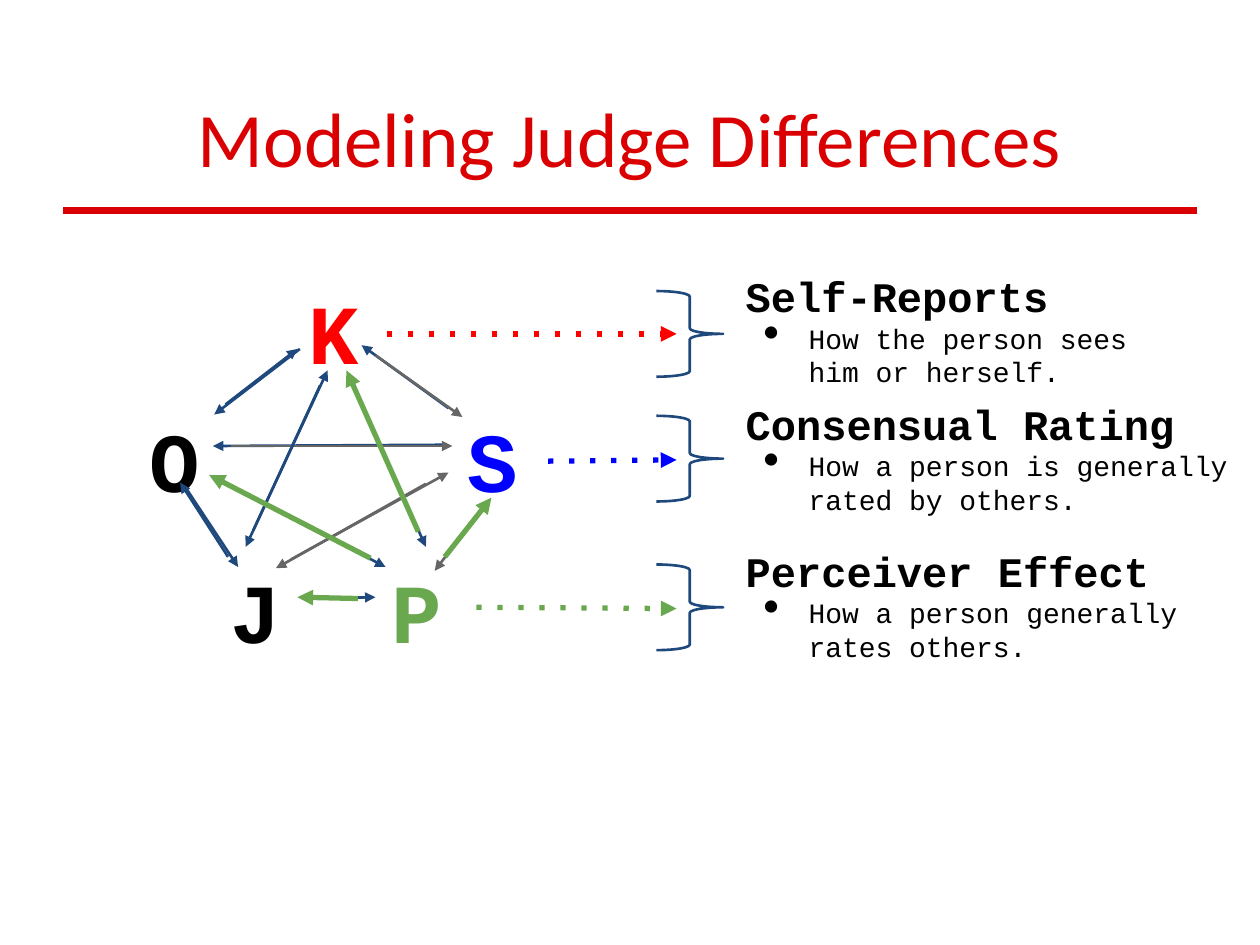
from lxml.etree import SubElement
from pptx import Presentation
from pptx.dml.color import RGBColor
from pptx.enum.shapes import MSO_CONNECTOR, MSO_SHAPE
from pptx.enum.text import MSO_ANCHOR, PP_ALIGN
from pptx.oxml.ns import qn
from pptx.util import Inches, Pt

COLORS = {
    "title": "DA0002", "navy": "1F497D", "gray": "666666", "green": "6AA84F",
    "red": "FF0000", "blue": "0000FF", "black": "000000",
}
MONO = "Courier New"
JUDGES = [
    ("K", 2.35, 2.13, "red"), ("S", 3.61, 3.14, "blue"), ("J", 1.73, 4.34, "black"),
    ("P", 3.01, 4.34, "green"), ("O", 1.09, 3.14, "black"),
]
BACK_RATINGS = [
    ((3.38, 3.84), (2.19, 4.51), "gray"),
    ((3.52, 3.53), (1.69, 3.54), "navy"),
]
RATINGS = [
    ((2.38, 2.77), (1.7, 3.29), "navy"), ((2.54, 3.06), (1.95, 4.34), "navy"),
    ((2.81, 3.08), (3.38, 4.34), "navy"), ((1.81, 4.42), (1.43, 3.83), "navy"),
    ((1.48, 3.88), (1.89, 4.5), "navy"), ((1.79, 3.83), (3.06, 4.5), "navy"),
    ((1.83, 3.54), (3.59, 3.54), "gray"), ((1.79, 3.21), (2.36, 2.77), "navy"),
    ((2.5, 4.75), (2.98, 4.74), "navy"), ((3.56, 3.24), (2.87, 2.74), "navy"),
    ((2.01, 4.21), (2.6, 2.94), "navy"), ((2.98, 2.82), (3.67, 3.31), "gray"),
    ((2.31, 4.44), (3.56, 3.75), "gray"), ((3.78, 4.1), (3.45, 4.53), "gray"),
]
PERCEIVER_RATINGS = [
    ((3.53, 4.42), (3.9, 3.95)), ((2.84, 4.75), (2.36, 4.74)),
    ((2.94, 4.43), (1.66, 3.77)), ((3.32, 4.22), (2.75, 2.94)),
]
MEASURES = [
    ("Perceiver Effect", "How a person generally rates others.",
     4.23, 4.08, 4.48, (3.78, 4.82), 4.83, "green"),
    ("Consensual Rating", "How a person is generally rated by others.",
     3.06, 4.11, 3.3, (4.35, 3.66), 3.65, "blue"),
    ("Self-Reports", "How the person sees him or herself.",
     2.05, 3.68, 2.31, (3.07, 2.65), 2.65, "red"),
]


def rgb(name):
    """Return the named colour."""
    return RGBColor.from_string(COLORS[name])


def add_run(paragraph, text, size, color, bold=False, font=MONO):
    """Append one formatted run."""
    run = paragraph.add_run()
    run.text = text
    run.font.name = font
    run.font.size = Pt(size)
    run.font.bold = bold
    run.font.color.rgb = rgb(color)


def set_insets(frame):
    """Wrap the text and give it equal margins."""
    frame.word_wrap = True
    frame.margin_left = frame.margin_right = Inches(0.1)
    frame.margin_top = frame.margin_bottom = Inches(0.1)


def add_text(slide, left, top, width, height):
    """Add an empty text box and return its frame."""
    box = slide.shapes.add_textbox(
        Inches(left), Inches(top), Inches(width), Inches(height))
    set_insets(box.text_frame)
    return box.text_frame


def add_line(slide, start, end, color, width=1.5, arrow=True, dotted=False):
    """Draw a straight line, optionally dotted or ending in an arrowhead."""
    line = slide.shapes.add_connector(
        MSO_CONNECTOR.STRAIGHT, *(Inches(value) for value in (*start, *end)))
    line.line.color.rgb = rgb(color)
    line.line.width = Pt(width)
    properties = line.element.spPr
    outline = properties.find(qn("a:ln"))
    if dotted:
        SubElement(outline, qn("a:prstDash"), val="dot")
    if arrow:
        SubElement(outline, qn("a:tailEnd"), type="triangle")
    SubElement(properties, qn("a:effectLst"))


def add_brace(slide, top):
    """Draw the brace that leads to a measure."""
    brace = slide.shapes.add_shape(
        MSO_SHAPE.RIGHT_BRACE, Inches(5.21), Inches(top), Inches(0.53), Inches(0.68))
    brace.adjustments[0] = 0.083
    brace.adjustments[1] = 0.5
    brace.shadow.inherit = False
    brace.fill.background()
    brace.line.color.rgb = rgb("navy")
    brace.line.width = Pt(1.5)


def add_bullet(paragraph):
    """Give a paragraph a large hanging bullet."""
    properties = paragraph._p.get_or_add_pPr()
    properties.set("marL", str(Inches(0.5)))
    properties.set("indent", str(Inches(-0.36)))
    bullet_color = SubElement(properties, qn("a:buClr"))
    SubElement(bullet_color, qn("a:srgbClr"), val=COLORS["black"])
    SubElement(properties, qn("a:buSzPct"), val="167000")
    SubElement(properties, qn("a:buChar"), char="•")


def add_title(slide, text):
    """Place the title above its rule."""
    add_line(slide, (0.5, 1.67), (9.5, 1.67), "title", 4, arrow=False)
    title = slide.shapes.title
    title.left, title.top = Inches(0.5), Inches(0.3)
    title.width, title.height = Inches(9), Inches(1.25)
    frame = title.text_frame
    set_insets(frame)
    frame.vertical_anchor = MSO_ANCHOR.BOTTOM
    frame.paragraphs[0].alignment = PP_ALIGN.CENTER
    add_run(frame.paragraphs[0], text, 44, "title", font="Calibri")


def add_judge(slide, letter, left, top, color):
    """Add the letter of one judge."""
    frame = add_text(slide, left, top, 0.63, 0.82)
    add_run(frame.paragraphs[0], letter, 48, color, bold=True)


def add_measure(slide, heading, meaning, top, width, brace_top, start, end_y, color):
    """Add a measure with its brace and dotted arrow."""
    add_line(slide, start, (5.37, end_y), color, 3, dotted=True)
    add_brace(slide, brace_top)
    frame = add_text(slide, 5.82, top, width, 0.85)
    add_run(frame.paragraphs[0], heading, 24, "black", bold=True)
    explanation = frame.add_paragraph()
    add_bullet(explanation)
    add_run(explanation, meaning, 16, "black")


def main():
    """Build and save the slide."""
    deck = Presentation()
    deck.slide_width, deck.slide_height = Inches(10), Inches(7.5)
    slide = deck.slides.add_slide(deck.slide_layouts[5])
    add_title(slide, "Modeling Judge Differences")
    for rating in BACK_RATINGS:
        add_line(slide, *rating)
    for judge in JUDGES:
        add_judge(slide, *judge)
    for rating in RATINGS:
        add_line(slide, *rating)
    for rating in PERCEIVER_RATINGS:
        add_line(slide, *rating, "green", 3)
    for measure in MEASURES:
        add_measure(slide, *measure)
    deck.save("out.pptx")


if __name__ == "__main__":
    main()
